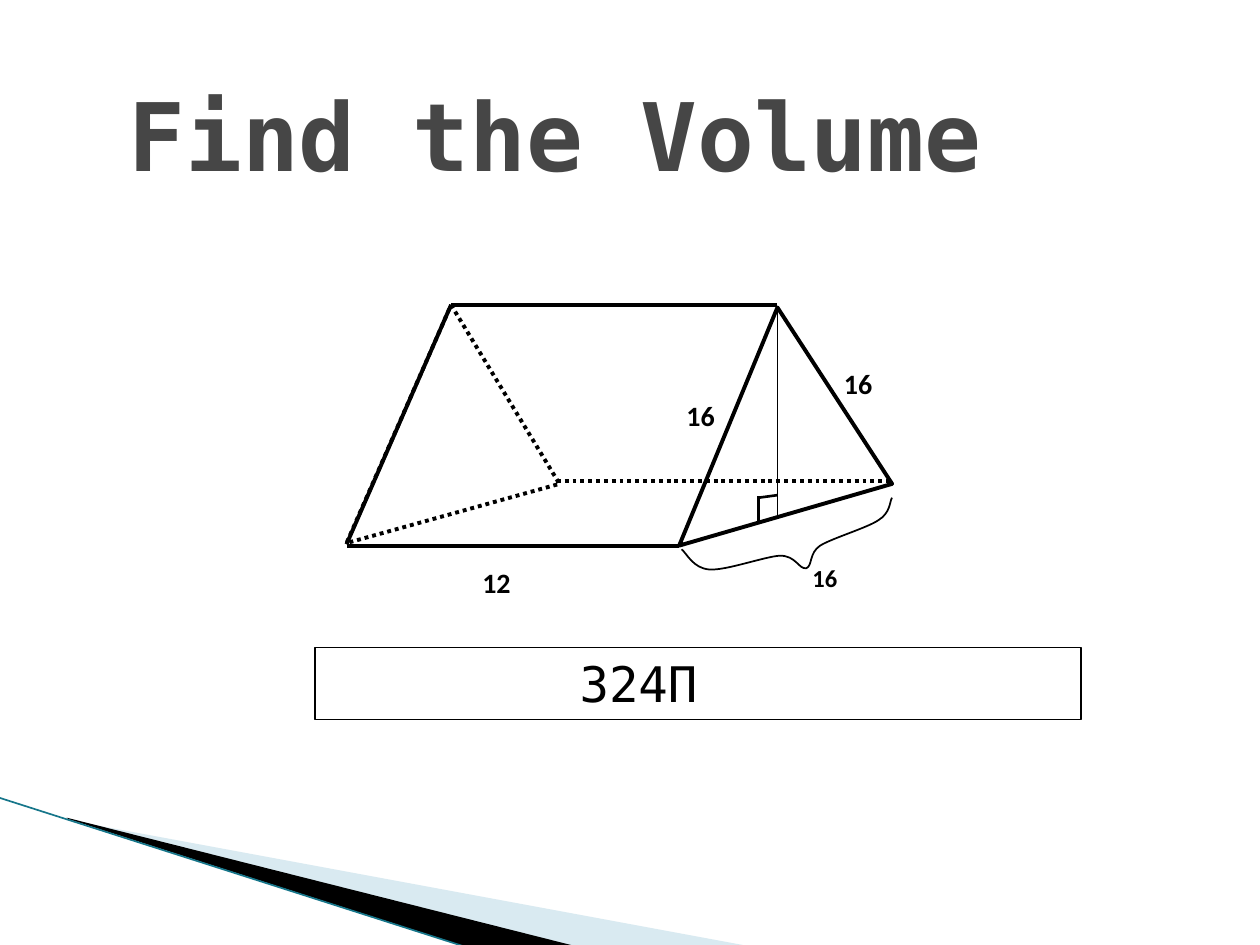
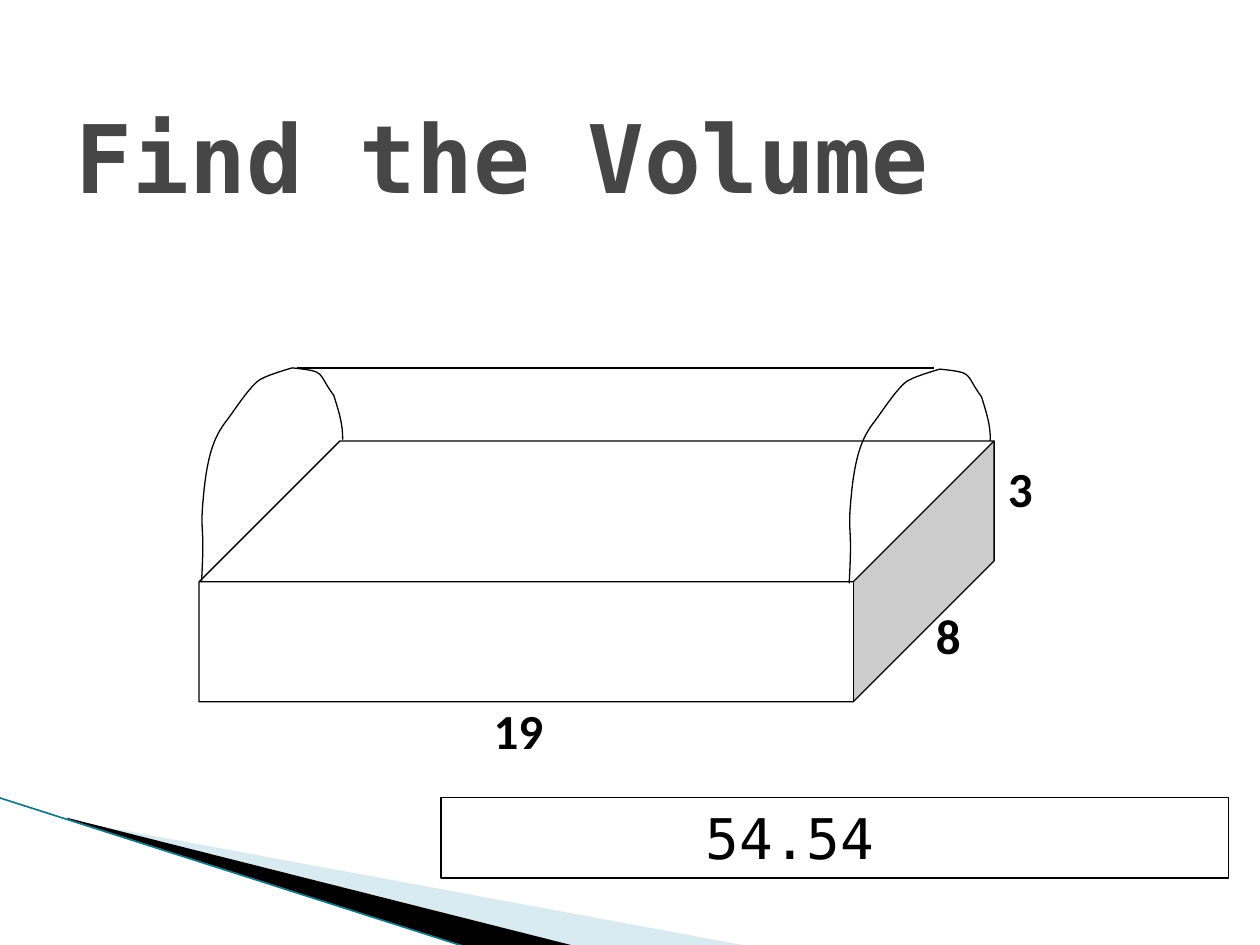
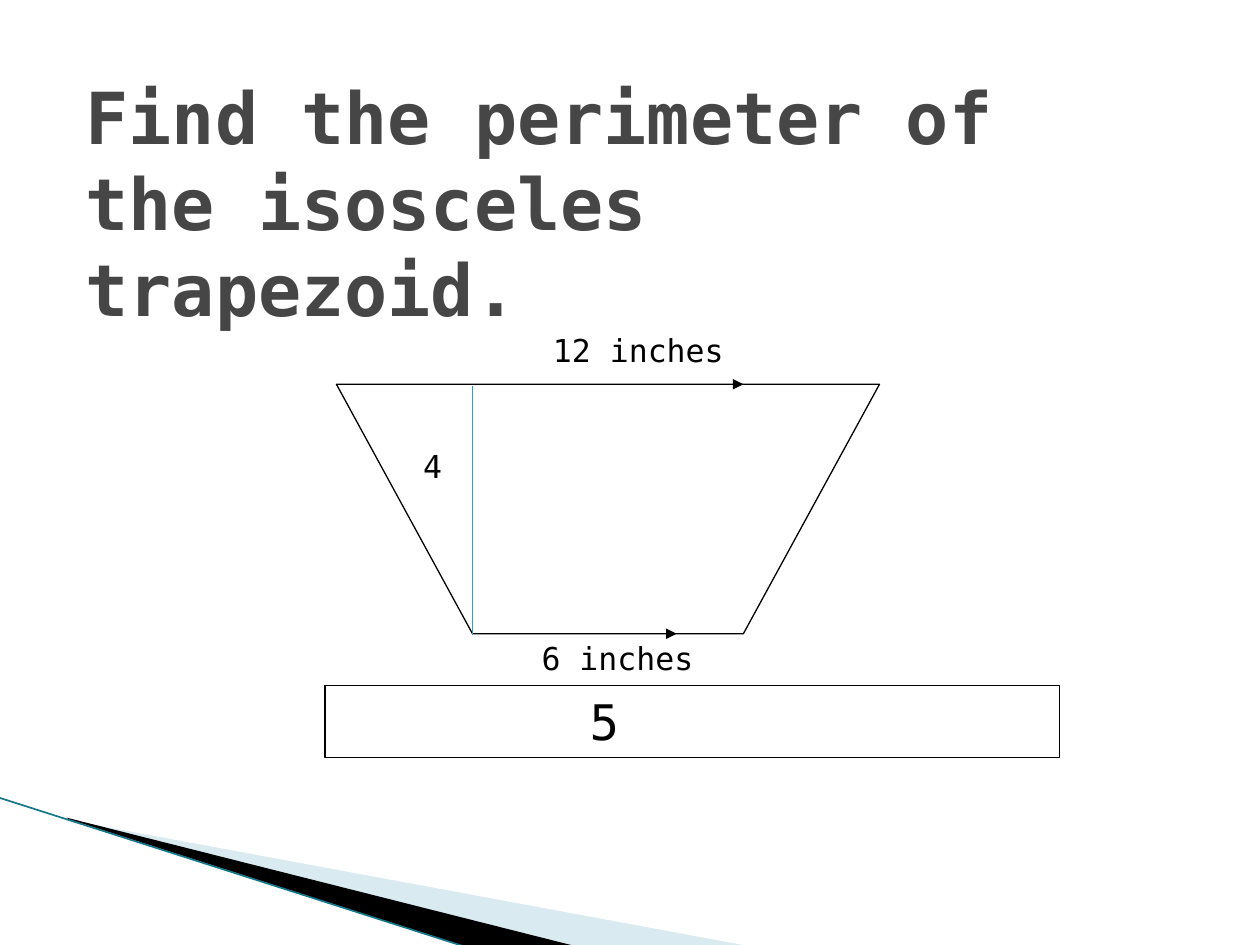
"""Build three geometry practice slides with volume and perimeter questions."""
from lxml.etree import SubElement
from pptx import Presentation
from pptx.dml.color import RGBColor
from pptx.enum.dml import MSO_LINE
from pptx.enum.shapes import MSO_CONNECTOR, MSO_SHAPE
from pptx.enum.text import MSO_ANCHOR, PP_ALIGN
from pptx.oxml.ns import qn
from pptx.util import Inches, Pt

BLACK = RGBColor(0x00, 0x00, 0x00)
WHITE = RGBColor(0xFF, 0xFF, 0xFF)
TITLE_GREY = RGBColor(0x46, 0x46, 0x46)
PALE_BLUE = RGBColor(0xA0, 0xCB, 0xDC)
EDGE_TEAL = RGBColor(0x16, 0x76, 0x8A)
HEIGHT_BLUE = RGBColor(0x2D, 0xA2, 0xBF)
MONO = "DejaVu Sans Mono"
LABEL_FONT = "Calibri"
ANSWER_INDENT = 2.1

PALE_BAND = [(0.55, 6.51), (5.95, 7.51), (4.56, 7.51), (0.55, 6.5)]
BLACK_BAND = [(0.53, 6.49), (4.57, 7.51), (3.72, 7.52), (0.54, 6.5)]
BAND_EDGE = [(-0.01, 6.33), (3.71, 7.52)]

FRONT_TRIANGLE = [(6.17, 2.44), (7.08, 3.84), (5.39, 4.33)]
BACK_TRIANGLE = [(3.58, 2.42), (4.44, 3.84), (2.75, 4.31)]
PRISM_LINES = [
    ((3.58, 2.42), (6.17, 2.42), {"width": 2.25}),
    ((4.42, 3.82), (7.07, 3.82), {"width": 2.25, "dash": MSO_LINE.ROUND_DOT}),
    ((2.75, 4.33), (5.39, 4.33), {"width": 2.25}),
    ((2.75, 4.32), (3.58, 2.42), {"width": 2.25}),
    ((6.17, 2.48), (6.17, 4.09), {"width": 1}),
    ((6.17, 3.93), (6.02, 3.95), {"width": 1.5}),
    ((6.02, 3.94), (6.02, 4.16), {"width": 1.5}),
]
PRISM_BRACE = [
    (5.41, 4.36), (5.45, 4.39), (5.5, 4.51), (5.63, 4.52),
    (5.76, 4.53), (6.06, 4.42), (6.19, 4.41),
    (6.32, 4.41), (6.34, 4.52), (6.4, 4.51),
    (6.45, 4.49), (6.42, 4.39), (6.51, 4.33),
    (6.61, 4.27), (6.88, 4.19), (6.97, 4.13),
    (7.07, 4.07), (7.06, 3.98), (7.08, 3.95),
]
PRISM_LABELS = [
    ("16", 6.35, 4.42, 14), ("16", 6.6, 2.86, 16),
    ("16", 5.35, 3.11, 16), ("12", 3.73, 4.44, 16),
]

LEFT_ARCH = [
    (1.6, 4.62), (1.63, 4.09), (1.58, 4.28), (1.62, 3.89),
    (1.65, 3.61), (1.7, 3.47), (1.79, 3.35),
    (1.84, 3.29), (1.99, 3.05), (2.07, 3.01),
    (2.14, 2.97), (2.32, 2.92), (2.32, 2.92),
    (2.6, 2.95), (2.51, 2.95), (2.65, 3.14),
    (2.7, 3.3), (2.72, 3.37), (2.72, 3.49),
]
ARCH_OFFSETS = [(5.14, 0.01), (0, 0)]
CUBE_LABELS = [("8", 7.33, 4.76), ("3", 7.9, 3.59), ("19", 3.82, 5.51)]

TRAPEZOID = [(2.67, 3.05), (3.75, 5.03), (5.9, 5.03), (6.98, 3.05)]
TRAPEZOID_LINES = [
    ((3.75, 3.05), (5.9, 3.05), {"arrow": True}),
    ((4.29, 5.03), (5.37, 5.03), {"arrow": True}),
    ((3.75, 5.04), (3.75, 3.06), {"color": HEIGHT_BLUE}),
]
TRAPEZOID_LABELS = [
    ("6 inches", (4.2, 5.02, 1.67, 0.4)),
    ("4", (3.26, 3.5, 0.49, 0.4)),
    ("12 inches", (4.29, 2.58, 2.15, 0.4)),
]


def paint(shape, fill=None, color=BLACK, width=0.75, dash=None):
    shape.shadow.inherit = False
    if fill is None:
        shape.fill.background()
    else:
        shape.fill.solid()
        shape.fill.fore_color.rgb = fill
    if color is None:
        shape.line.fill.background()
    else:
        style_line(shape.line, color, width, dash)


def style_line(line, color, width, dash):
    line.color.rgb = color
    line.width = Pt(width)
    if dash is not None:
        line.dash_style = dash


def add_line(page, start, end, color=BLACK, width=0.75, dash=None, arrow=False):
    ends = [Inches(value) for value in (*start, *end)]
    connector = page.shapes.add_connector(MSO_CONNECTOR.STRAIGHT, *ends)
    style_line(connector.line, color, width, dash)
    properties = connector.element.spPr
    if arrow:
        SubElement(properties.find(qn("a:ln")), qn("a:tailEnd"), type="triangle")
    SubElement(properties, qn("a:effectLst"))


def add_outline(page, points, closed=True, **style):
    corners = [(Inches(x), Inches(y)) for x, y in points]
    builder = page.shapes.build_freeform(*corners[0])
    builder.add_line_segments(corners[1:], close=closed)
    outline = builder.convert_to_shape()
    paint(outline, **style)
    return outline


def add_curve(page, controls, **style):
    outline = add_outline(page, controls, closed=False, **style)
    steps = list(outline.element.spPr.iter(qn("a:lnTo")))
    track = steps[0].getparent()
    for first in range(0, len(steps), 3):
        bend = SubElement(track, qn("a:cubicBezTo"))
        for step in steps[first:first + 3]:
            bend.append(step[0])
            track.remove(step)


def write(box, text, size, name=MONO, bold=False, color=BLACK, anchor=MSO_ANCHOR.TOP):
    frame = box.text_frame
    frame.word_wrap = True
    frame.vertical_anchor = anchor
    paragraph = frame.paragraphs[0]
    paragraph.alignment = PP_ALIGN.LEFT
    span = paragraph.add_run()
    span.text = text
    values = {"name": name, "size": Pt(size), "bold": bold}
    for key, value in values.items():
        setattr(span.font, key, value)
    span.font.color.rgb = color


def add_text(page, text, area, size, **style):
    box = page.shapes.add_textbox(*map(Inches, area))
    write(box, text, size, **style)


def add_answer(page, text, area, size):
    box = page.shapes.add_shape(MSO_SHAPE.RECTANGLE, *map(Inches, area))
    paint(box)
    write(box, text, size)
    box.text_frame.margin_left = Inches(ANSWER_INDENT)


def start_page(deck, title, area, size):
    page = deck.slides.add_slide(deck.slide_layouts[6])
    pale = add_outline(page, PALE_BAND, fill=PALE_BLUE, color=None)
    tint = pale.element.spPr.find(qn("a:solidFill"))[0]
    SubElement(tint, qn("a:alpha"), val="40000")
    add_outline(page, BLACK_BAND, fill=BLACK, color=None)
    add_line(page, *BAND_EDGE, color=EDGE_TEAL, width=0.95)
    add_text(page, title, area, size, bold=True, color=TITLE_GREY,
             anchor=MSO_ANCHOR.MIDDLE)
    return page


def add_prism_page(deck):
    page = start_page(deck, "Find the Volume", (0.92, 0.3, 9, 1.53), 54)
    add_outline(page, FRONT_TRIANGLE, width=2.25)
    add_outline(page, BACK_TRIANGLE, width=2.25, dash=MSO_LINE.ROUND_DOT)
    for start, end, style in PRISM_LINES:
        add_line(page, start, end, **style)
    add_curve(page, PRISM_BRACE, width=1)
    for text, left, top, size in PRISM_LABELS:
        add_text(page, text, (left, top, 0.74, 0.72), size, name=LABEL_FONT, bold=True)
    add_answer(page, "324Π", (2.5, 5.14, 6.08, 0.57), 28)


def add_cube_page(deck):
    page = start_page(deck, "Find the Volume", (0.5, 0.3, 9, 1.87), 54)
    cube = page.shapes.add_shape(MSO_SHAPE.CUBE, *map(Inches, (1.58, 3.5, 6.31, 2.07)))
    cube.adjustments[0] = 0.54
    paint(cube, fill=WHITE)
    for text, left, top in CUBE_LABELS:
        add_text(page, text, (left, top, 1.68, 0.83), 28, name=LABEL_FONT, bold=True)
    for right, down in ARCH_OFFSETS:
        add_curve(page, [(x + right, y + down) for x, y in LEFT_ARCH])
    add_line(page, (2.36, 2.92), (7.41, 2.92))
    add_answer(page, "54.54", (3.5, 6.33, 6.25, 0.64), 32)


def add_trapezoid_page(deck):
    page = start_page(deck, "Find the perimeter of the isosceles trapezoid.",
                      (0.58, 0.42, 8.25, 2.37), 41)
    add_outline(page, TRAPEZOID, fill=WHITE)
    for start, end, style in TRAPEZOID_LINES:
        add_line(page, start, end, **style)
    for text, area in TRAPEZOID_LABELS:
        add_text(page, text, area, 18)
    add_answer(page, "5", (2.58, 5.44, 5.83, 0.57), 28)


def main():
    deck = Presentation()
    deck.slide_width, deck.slide_height = Inches(10), Inches(7.5)
    add_prism_page(deck)
    add_cube_page(deck)
    add_trapezoid_page(deck)
    deck.save("out.pptx")


if __name__ == "__main__":
    main()
